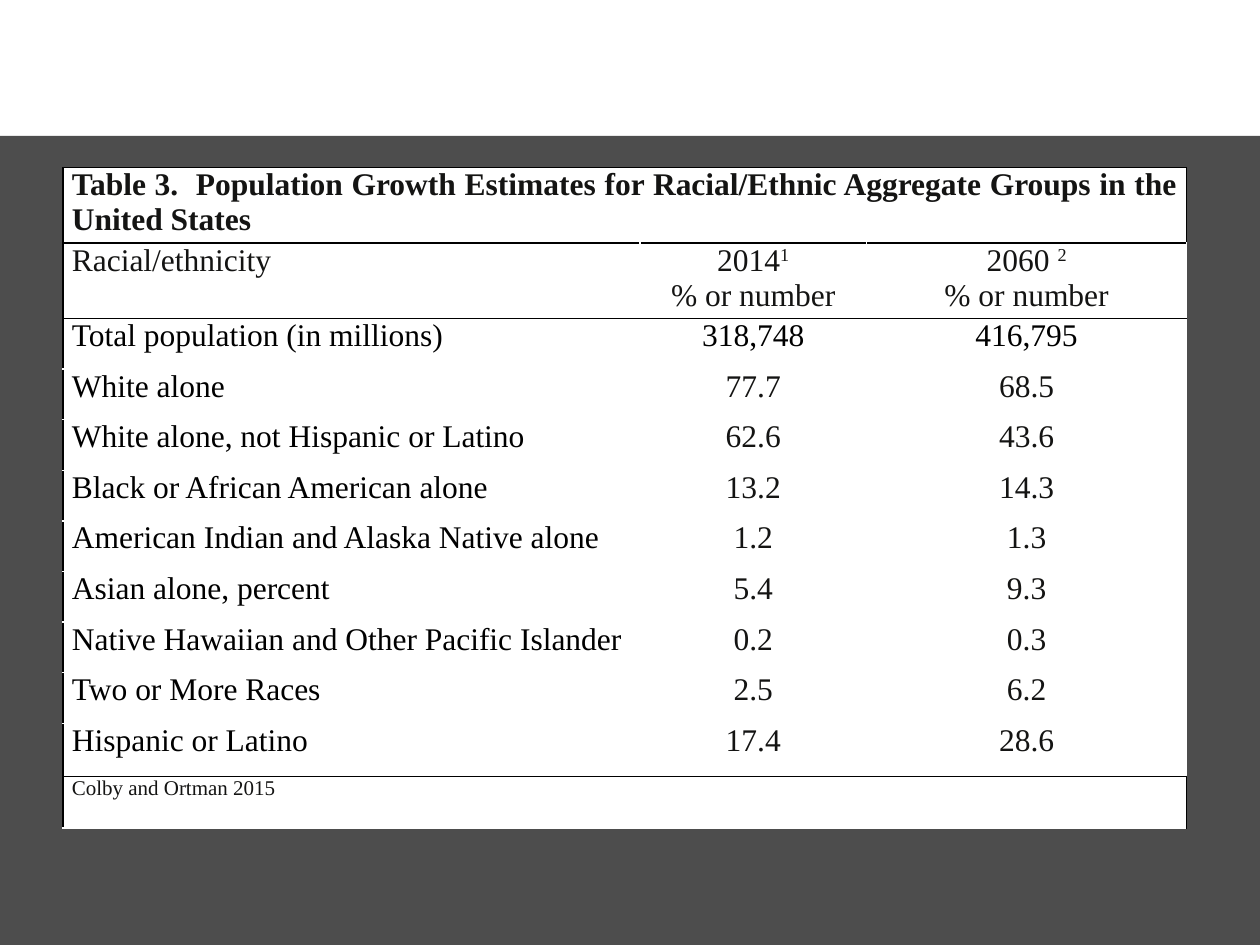
from dataclasses import dataclass

from lxml.etree import SubElement
from pptx import Presentation
from pptx.dml.color import RGBColor
from pptx.enum.shapes import MSO_SHAPE
from pptx.enum.text import PP_ALIGN
from pptx.oxml.ns import qn
from pptx.util import Cm, Pt


@dataclass(frozen=True)
class Theme:
    font: str = "Times New Roman"
    band: str = "4D4D4D"
    paper: str = "FFFFFF"
    rule: str = "000000"
    label: str = "000000"
    ink: str = "141413"
    body_size: int = 18
    source_size: int = 12
    rule_width: int = 1


THEME = Theme()
TITLE = "Table 3.  Population Growth Estimates for Racial/Ethnic Aggregate Groups in the United States"
SOURCE = "Colby and Ortman 2015"
YEARS = [("2014", "1"), ("2060 ", "2")]
UNIT = "% or number"
POPULATION = [
    ("Total population (in millions)", "318,748", "416,795"),
    ("White alone", "77.7", "68.5"),
    ("White alone, not Hispanic or Latino", "62.6", "43.6"),
    ("Black or African American alone", "13.2", "14.3"),
    ("American Indian and Alaska Native alone", "1.2", "1.3"),
    ("Asian alone, percent", "5.4", "9.3"),
    ("Native Hawaiian and Other Pacific Islander", "0.2", "0.3"),
    ("Two or More Races", "2.5", "6.2"),
    ("Hispanic or Latino", "17.4", "28.6"),
]
COLUMN_WIDTHS = [11.63, 4.57, 6.45]
ROW_HEIGHTS = [1.52] * 2 + [1.02] * 8 + [1.07, 1.04]


def add_band(slide):
    band = slide.shapes.add_shape(MSO_SHAPE.RECTANGLE, Cm(0), Cm(2.74), Cm(25.4), Cm(16.31))
    band.shadow.inherit = False
    band.fill.solid()
    band.fill.fore_color.rgb = RGBColor.from_string(THEME.band)
    band.line.fill.background()


def add_grid(slide):
    grid = slide.shapes.add_table(
        len(ROW_HEIGHTS), len(COLUMN_WIDTHS), Cm(1.27), Cm(3.38),
        Cm(sum(COLUMN_WIDTHS)), Cm(sum(ROW_HEIGHTS)),
    ).table
    grid.first_row = False
    grid.horz_banding = False
    for column, width in zip(grid.columns, COLUMN_WIDTHS):
        column.width = Cm(width)
    for row, height in zip(grid.rows, ROW_HEIGHTS):
        row.height = Cm(height)
    return grid


def style_cell(cell, black_sides):
    cell.margin_left = cell.margin_right = Cm(0.18)
    cell.margin_top = cell.margin_bottom = Cm(0)
    properties = cell._tc.get_or_add_tcPr()
    for side in "LRTB":
        edge = SubElement(properties, qn(f"a:ln{side}"), w=str(Pt(THEME.rule_width)))
        paint = SubElement(edge, qn("a:solidFill"))
        color = THEME.rule if side in black_sides else THEME.paper
        SubElement(paint, qn("a:srgbClr"), val=color)
    cell.fill.solid()
    cell.fill.fore_color.rgb = RGBColor.from_string(THEME.paper)


def write_cell(cell, text, align=PP_ALIGN.LEFT, color=THEME.ink,
               size=THEME.body_size, bold=False, superscript=""):
    cell.text_frame.text = text
    if superscript:
        note = cell.text_frame.paragraphs[0].add_run()
        note.text = superscript
        note._r.get_or_add_rPr().set("baseline", "30000")
    for paragraph in cell.text_frame.paragraphs:
        paragraph.alignment = align
        for run in paragraph.runs:
            run.font.name = THEME.font
            run.font.size = Pt(size)
            run.font.bold = bold
            run.font.color.rgb = RGBColor.from_string(color)


def style_grid(grid):
    last = len(ROW_HEIGHTS) - 1
    row_sides = {0: "LRTB", 1: "TB", 2: "T", last - 1: "B", last: "LRT"}
    for row_index, row in enumerate(grid.rows):
        for column_index, cell in enumerate(row.cells):
            left = "L" if column_index == 0 else ""
            style_cell(cell, row_sides.get(row_index, "") + left)
    for row_index in (0, last):
        grid.cell(row_index, 0).merge(grid.cell(row_index, 2))


def write_grid(grid):
    write_cell(grid.cell(0, 0), TITLE, PP_ALIGN.JUSTIFY, bold=True)
    write_cell(grid.cell(1, 0), "Racial/ethnicity")
    for column, (year, note) in enumerate(YEARS, 1):
        write_cell(grid.cell(1, column), f"{year}\n{UNIT}", PP_ALIGN.CENTER, superscript=note)
    for row, (group, *figures) in enumerate(POPULATION, 2):
        write_cell(grid.cell(row, 0), group, color=THEME.label)
        figure_color = THEME.label if row == 2 else THEME.ink
        for column, figure in enumerate(figures, 1):
            write_cell(grid.cell(row, column), figure, PP_ALIGN.CENTER, figure_color)
    write_cell(grid.cell(len(ROW_HEIGHTS) - 1, 0), SOURCE, PP_ALIGN.JUSTIFY,
               size=THEME.source_size)


def main():
    deck = Presentation()
    deck.slide_width, deck.slide_height = Cm(25.4), Cm(19.05)
    slide = deck.slides.add_slide(deck.slide_layouts[6])
    add_band(slide)
    grid = add_grid(slide)
    style_grid(grid)
    write_grid(grid)
    deck.save("out.pptx")


if __name__ == "__main__":
    main()
